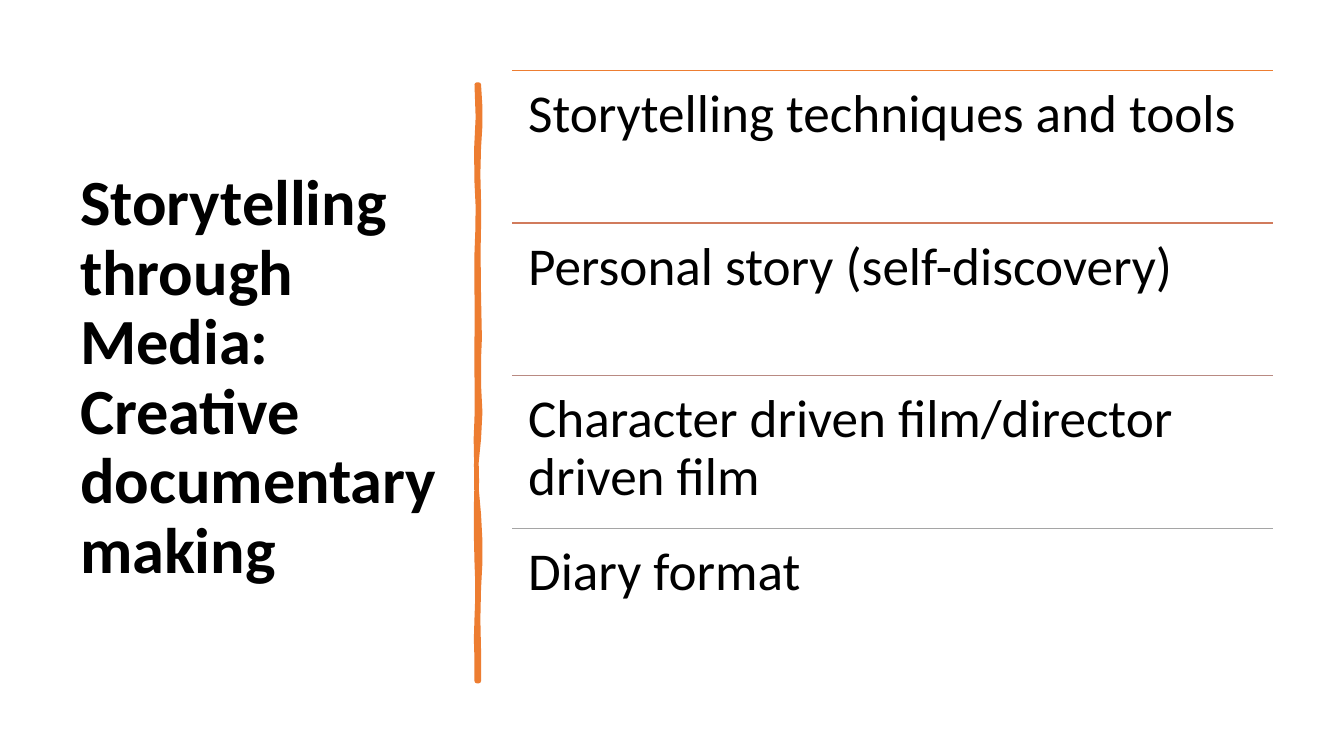
from dataclasses import dataclass

from pptx import Presentation
from pptx.dml.color import RGBColor
from pptx.enum.shapes import MSO_CONNECTOR
from pptx.enum.text import MSO_ANCHOR, MSO_AUTO_SIZE, PP_ALIGN
from pptx.oxml.ns import qn
from pptx.util import Pt

LINE = MSO_CONNECTOR.STRAIGHT
MID, TOP = MSO_ANCHOR.MIDDLE, MSO_ANCHOR.TOP
LEFT, FIXED = PP_ALIGN.LEFT, MSO_AUTO_SIZE.NONE


@dataclass(frozen=True)
class Theme:
    """Hold the colours, font and type sizes of the slide."""
    font: str = "Calibri"
    ink: str = "000000"
    accent: str = "ED7D31"
    rules: tuple = ("ED7D31", "D17B5C", "B98A82", "A5A5A5")
    head: int = 46
    item: int = 38
    rule: int = 1
    brush: float = 3.25


THEME = Theme()
TITLE = "Storytelling through Media: Creative documentary making"
TOPICS = (
    "Storytelling techniques and tools",
    "Personal story (self-discovery)",
    "Character driven film/director driven film",
    "Diary format",
)
DOWN = ((1.4, 1.4, 45), (-1.4, 0.7, 102), (-0.7, 0, 151), (0, 1.4, 196),
        (-1.4, 2.9, 253), (-2.9, -2.2, 307), (1.4, 1.4, 360), (-1.4, 0.7, 426))
BACK = ((0.7, -1.4, 381), (0.7, 0.7, 341), (-0.7, -0.7, 283), (0, -1.4, 238),
        (0.7, -0.7, 181), (0.7, -0.7, 120), (0.7, 1.4, 70), (-2.2, 2.9, 0))


def color(code):
    """Turn a hex code into a colour."""
    return RGBColor.from_string(code)


def write(frame, text, size, anchor, bold=False):
    """Fill a text frame with one styled run."""
    frame.word_wrap, frame.auto_size = True, FIXED
    frame.vertical_anchor = anchor
    para = frame.paragraphs[0]
    para.alignment, para.line_spacing = LEFT, 0.9
    run = para.add_run()
    run.text = text
    font = run.font
    font.name, font.size, font.bold = THEME.font, Pt(size), bold
    font.color.rgb = color(THEME.ink)


def heading(slide, left, top, width, height):
    """Place the title in its box."""
    title = slide.shapes.title
    title.left, title.top = Pt(left), Pt(top)
    title.width, title.height = Pt(width), Pt(height)
    write(title.text_frame, TITLE, THEME.head, MID, True)


def edge(x, top, start, waves, steps=3):
    """Trace a wavy edge as points along cubic curves."""
    points = []
    for near, far, end in waves:
        for step in range(1, steps + 1):
            t = step / steps
            bend = 3 * t * (1 - t) * ((1 - t) * near + t * far)
            points.append((Pt(x + bend), Pt(top + start + t * (end - start))))
        start = end
    return points


def brush(slide, left, top, width, height):
    """Paint the upright brush divider."""
    build = slide.shapes.build_freeform(Pt(left + width), Pt(top))
    build.add_line_segments(edge(left + width, top, 0, DOWN), close=False)
    build.add_line_segments([(Pt(left), Pt(top + height))], close=False)
    build.add_line_segments(edge(left, top, height, BACK), close=True)
    shape = build.convert_to_shape()
    shape.shadow.inherit = False
    shape.fill.solid()
    shape.fill.fore_color.rgb = color(THEME.accent)
    shape.line.color.rgb = color(THEME.accent)
    shape.line.width = Pt(THEME.brush)


def topics(slide, left, top, width, height):
    """Stack the ruled topics in equal rows."""
    row = height / len(TOPICS)
    for i, (text, tint) in enumerate(zip(TOPICS, THEME.rules)):
        y = Pt(top + i * row)
        rule = slide.shapes.add_connector(LINE, Pt(left), y, Pt(left + width), y)
        rule.line.color.rgb = color(tint)
        rule.line.width = Pt(THEME.rule)
        props = rule._element.spPr
        props.append(props.makeelement(qn("a:effectLst"), {}))
        frame = slide.shapes.add_textbox(Pt(left), y, Pt(width), Pt(row)).text_frame
        frame.margin_left = frame.margin_right = Pt(11.4)
        frame.margin_top = frame.margin_bottom = Pt(11.4)
        write(frame, text, THEME.item, TOP)


def main():
    """Build and save the slide."""
    deck = Presentation()
    deck.slide_width, deck.slide_height = Pt(960), Pt(540)
    slide = deck.slides.add_slide(deck.slide_layouts[5])
    heading(slide, 50, 50.4, 269.5, 440)
    brush(slide, 340.6, 60.5, 1.4, 426)
    topics(slide, 365.8, 50.4, 543.6, 436)
    deck.save("out.pptx")


if __name__ == "__main__":
    main()
